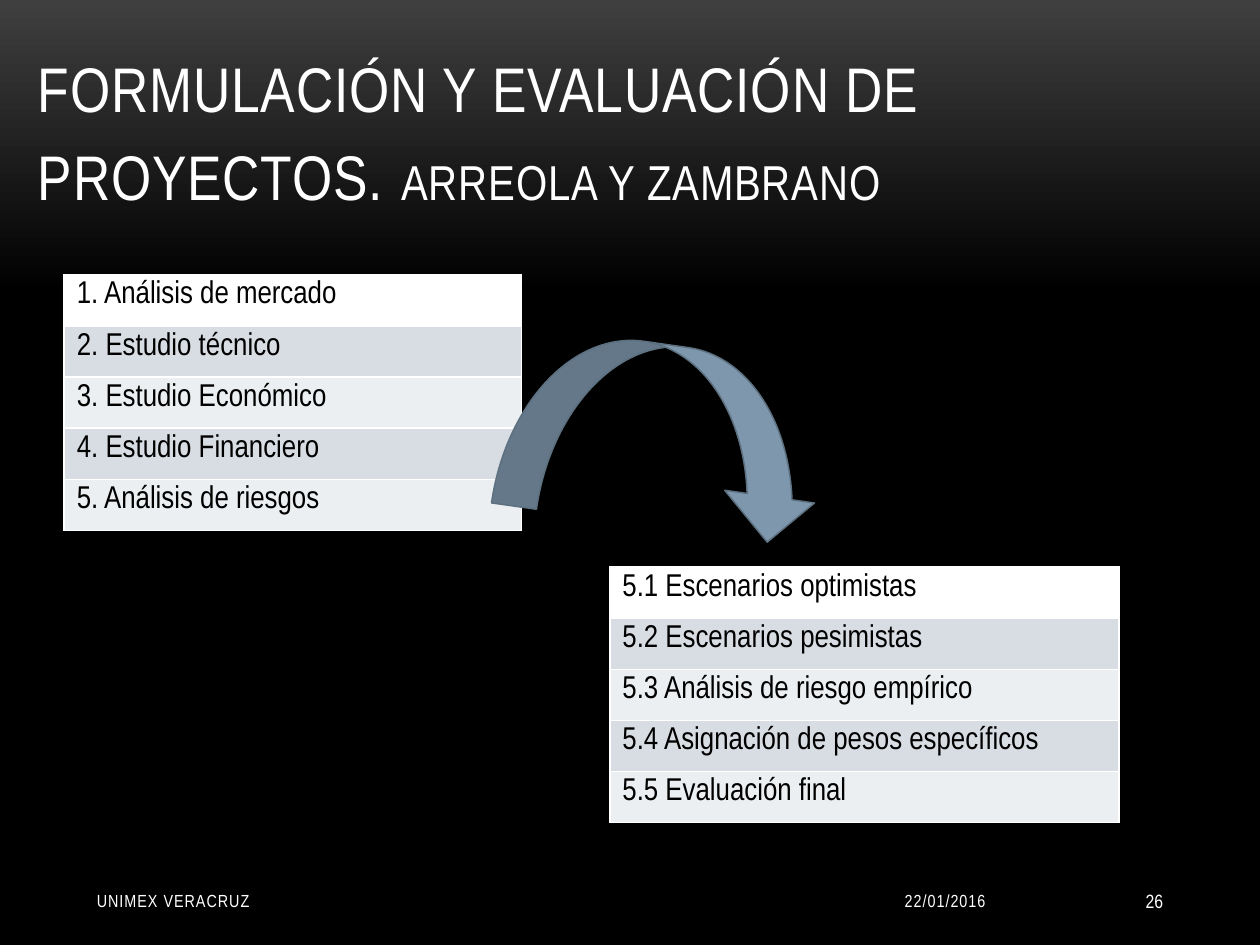
from lxml.etree import SubElement
from pptx import Presentation
from pptx.dml.color import RGBColor
from pptx.enum.shapes import MSO_SHAPE
from pptx.enum.text import MSO_ANCHOR, MSO_AUTO_SIZE, PP_ALIGN
from pptx.oxml.ns import qn
from pptx.util import Inches, Pt

WHITE = RGBColor(0xFF, 0xFF, 0xFF)
BLACK = RGBColor(0x00, 0x00, 0x00)
CHARCOAL = RGBColor(0x3F, 0x3F, 0x3F)
BAND_DARK = RGBColor(0xD8, 0xDD, 0xE3)
BAND_LIGHT = RGBColor(0xEC, 0xEF, 0xF1)
STEEL = RGBColor(0x7E, 0x97, 0xAD)
STEEL_DARK = RGBColor(0x5D, 0x70, 0x80)

STEPS = ["1. Análisis de mercado", "2. Estudio técnico", "3. Estudio Económico",
         "4. Estudio Financiero", "5. Análisis de riesgos"]
RISK_STEPS = ["5.1 Escenarios optimistas", "5.2 Escenarios pesimistas",
              "5.3 Análisis de riesgo empírico",
              "5.4 Asignación de pesos específicos", "5.5 Evaluación final"]


class Deck:
    """Style and current slide; every box is (left, top, width, height) in % of the slide."""
    font = "Arial Narrow"

    def __init__(self, width, height):
        self.prs = Presentation()
        self.prs.slide_width, self.prs.slide_height = Inches(width), Inches(height)
        self.s = self.prs.slides.add_slide(self.prs.slide_layouts[5])

    def box(self, left, top, width, height):
        w, h = self.prs.slide_width, self.prs.slide_height
        return [int(share * side / 100)
                for share, side in zip((left, top, width, height), (w, h, w, h))]

    def background(self, top, bottom, end):
        fill = self.s.background.fill
        fill.gradient()
        fill.gradient_angle = 270
        for stop, color, position in zip(fill.gradient_stops, (top, bottom), (0, end)):
            stop.color.rgb, stop.position = color, position

    def run(self, p, text, size, color=WHITE, spacing=0):
        """Add a run; spacing is the gap between letters in points."""
        r = p.add_run()
        r.text = text
        for name, value in {"name": self.font, "size": Pt(size), "bold": False}.items():
            setattr(r.font, name, value)
        r.font.color.rgb = color
        if spacing:
            r.font._element.set("spc", str(int(spacing * 100)))

    def title(self, box, runs):
        sp = self.s.shapes.title
        sp.left, sp.top, sp.width, sp.height = self.box(*box)
        tf = sp.text_frame
        frame = {"word_wrap": True, "auto_size": MSO_AUTO_SIZE.NONE,
                 "vertical_anchor": MSO_ANCHOR.BOTTOM}
        for name, value in frame.items():
            setattr(tf, name, value)
        p = tf.paragraphs[0]
        p.alignment, p.line_spacing = PP_ALIGN.LEFT, 1.06
        for text, size in runs:
            self.run(p, text, size, spacing=0.5)

    def footer(self, left, width, text, align, size=10, spacing=0.6):
        tf = self.s.shapes.add_textbox(*self.box(left, 92.67, width, 5.33)).text_frame
        tf.word_wrap, tf.vertical_anchor = True, MSO_ANCHOR.MIDDLE
        p = tf.paragraphs[0]
        p.alignment = align
        self.run(p, text, size, spacing=spacing)

    def border(self, cell, sides):
        for side in sides:
            ln = SubElement(cell._tc.get_or_add_tcPr(), qn(f"a:ln{side}"), w=str(Pt(1)))
            SubElement(SubElement(ln, qn("a:solidFill")), qn("a:srgbClr"), val=str(WHITE))

    def table(self, box, rows):
        """One-column table: white first row, then alternating bands."""
        table = self.s.shapes.add_table(len(rows), 1, *self.box(*box)).table
        table.first_row = table.horz_banding = False
        for i, text in enumerate(rows):
            cell = table.cell(i, 0)
            if i:
                self.border(cell, "LRB" if i == 1 else "LRTB")
            cell.fill.solid()
            cell.fill.fore_color.rgb = (BAND_LIGHT, BAND_DARK)[i % 2] if i else WHITE
            self.run(cell.text_frame.paragraphs[0], text, 18, BLACK)

    def arrow(self, box, rotation):
        sp = self.s.shapes.add_shape(MSO_SHAPE.CURVED_DOWN_ARROW, *self.box(*box))
        sp.rotation = rotation
        sp.shadow.inherit = False
        sp.fill.solid()
        sp.fill.fore_color.rgb = STEEL
        sp.line.color.rgb, sp.line.width = STEEL_DARK, Pt(0.85)


def main():
    deck = Deck(10, 7.5)
    deck.background(CHARCOAL, BLACK, 0.31)
    deck.title((2, 0, 96.1, 23.33), [("FORMULACIÓN Y EVALUACIÓN DE PROYECTOS.", 36),
                                     (" ", 40), ("ARREOLA Y ZAMBRANO", 28)])
    deck.footer(62.5, 16.7, "22/01/2016", PP_ALIGN.RIGHT)
    deck.footer(6.7, 31.7, "UNIMEX VERACRUZ", PP_ALIGN.LEFT)
    deck.footer(82.5, 10.8, "26", PP_ALIGN.RIGHT, size=11, spacing=0)
    deck.table((5.1, 29.07, 36.3, 27.07), STEPS)
    deck.table((48.4, 60, 40.4, 27.07), RISK_STEPS)
    deck.arrow((39.9, 36.53, 25.7, 19.2), 8.1)
    deck.prs.save("out.pptx")


if __name__ == "__main__":
    main()
